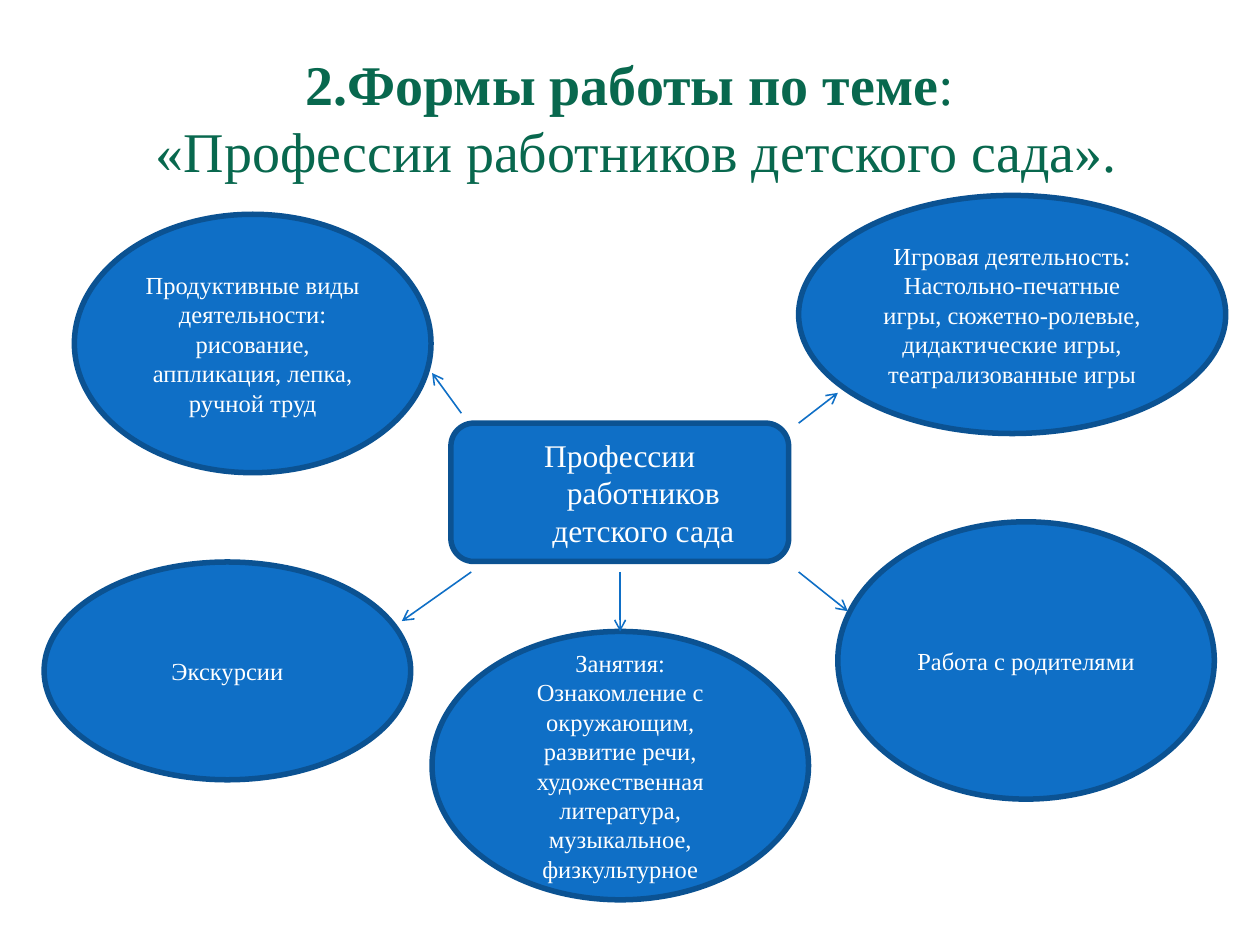
from lxml import etree
from pptx import Presentation
from pptx import util as u
from pptx.dml.color import RGBColor
from pptx.enum import shapes, text
from pptx.oxml import ns

COLORS = {"title": "08684E", "fill": "0F6FC6", "outline": "0B5292", "label": "FFFFFF"}
FONT = "Times New Roman"

ACTIVITIES = [
    ((1.5, 4.32, 7.19, 5.21),
     ["Продуктивные виды деятельности:", "рисование, аппликация, лепка, ручной труд"]),
    ((0.89, 11.33, 7.39, 4.39), ["Экскурсии"]),
    ((8.71, 12.73, 7.59, 5.41),
     ["Занятия:", "Ознакомление с окружающим, развитие речи, художественная "
      "литература, музыкальное, физкультурное"]),
    ((16.89, 10.52, 7.59, 5.59), ["Работа с родителями"]),
    ((16.1, 3.94, 8.61, 4.8),
     ["Игровая деятельность:", "Настольно-печатные игры, сюжетно-ролевые, "
      "дидактические игры, театрализованные игры"]),
]

ARROWS = [
    (9.3, 8.33, 8.71, 7.52),
    (16.1, 8.53, 16.89, 7.92),
    (16.1, 11.53, 17.09, 12.32),
    (9.5, 11.53, 8.1, 12.52),
    (12.5, 11.53, 12.5, 12.73),
]


def rgb(name):
    return RGBColor.from_string(COLORS[name])


def place(shape, box):
    shape.left, shape.top, shape.width, shape.height = map(u.Cm, box)


def style_font(font, size, color, bold=False):
    font.name = FONT
    font.size = u.Pt(size)
    font.bold = bold
    font.color.rgb = rgb(color)


def style_node(node, size):
    node.fill.solid()
    node.fill.fore_color.rgb = rgb("fill")
    node.line.color.rgb = rgb("outline")
    node.line.width = u.Pt(3.15)
    node.text_frame.vertical_anchor = text.MSO_ANCHOR.MIDDLE
    for paragraph in node.text_frame.paragraphs:
        paragraph.alignment = text.PP_ALIGN.CENTER
        for run in paragraph.runs:
            style_font(run.font, size, "label")


def fill_title(title):
    place(title, (1.27, 0.76, 22.86, 3.18))
    frame = title.text_frame
    frame.auto_size = text.MSO_AUTO_SIZE.NONE
    frame.vertical_anchor = text.MSO_ANCHOR.MIDDLE
    heading = frame.paragraphs[0]
    heading.alignment = text.PP_ALIGN.CENTER
    heading.text = "2.Формы работы по теме"
    heading.add_run().text = ":"
    heading.add_line_break()
    heading.add_run().text = " «Профессии работников детского сада»."
    for index, run in enumerate(heading.runs):
        style_font(run.font, 32, "title", bold=index == 0)
    line_break = heading._p.find(ns.qn("a:br"))
    etree.SubElement(line_break, ns.qn("a:rPr"), sz="3200")


def fill_topic(topic):
    place(topic, (9.09, 8.53, 6.81, 2.79))
    outline = etree.Element(ns.qn("a:prstGeom"), prst="roundRect")
    etree.SubElement(outline, ns.qn("a:avLst"))
    topic._element.spPr.insert(1, outline)
    frame = topic.text_frame
    frame.text = "Профессии работников детского сада"
    frame.auto_size = text.MSO_AUTO_SIZE.NONE
    paragraph = frame.paragraphs[0]
    properties = paragraph._p.get_or_add_pPr()
    properties.set("marL", str(u.Cm(0.95)))
    properties.set("indent", str(-u.Cm(0.95)))
    etree.SubElement(properties, ns.qn("a:buNone"))
    paragraph.space_before = u.Pt(0)
    style_node(topic, 18)


def add_activity(slide, box, lines):
    activity = slide.shapes.add_shape(shapes.MSO_SHAPE.OVAL, *map(u.Cm, box))
    activity.shadow.inherit = False
    activity.text_frame.text = "\n".join(lines)
    style_node(activity, 14)


def add_arrow(slide, ends):
    arrow = slide.shapes.add_connector(shapes.MSO_CONNECTOR.STRAIGHT, *map(u.Cm, ends))
    arrow.line.color.rgb = rgb("fill")
    arrow.line.width = u.Pt(0.9)
    etree.SubElement(arrow.line._get_or_add_ln(), ns.qn("a:tailEnd"), type="arrow")
    etree.SubElement(arrow._element.spPr, ns.qn("a:effectLst"))


def main():
    deck = Presentation()
    deck.slide_width, deck.slide_height = u.Cm(25.4), u.Cm(19.05)
    slide = deck.slides.add_slide(deck.slide_layouts[1])
    fill_title(slide.shapes.title)
    fill_topic(slide.placeholders[1])
    for box, lines in ACTIVITIES:
        add_activity(slide, box, lines)
    for ends in ARROWS:
        add_arrow(slide, ends)
    deck.save("out.pptx")


if __name__ == "__main__":
    main()
